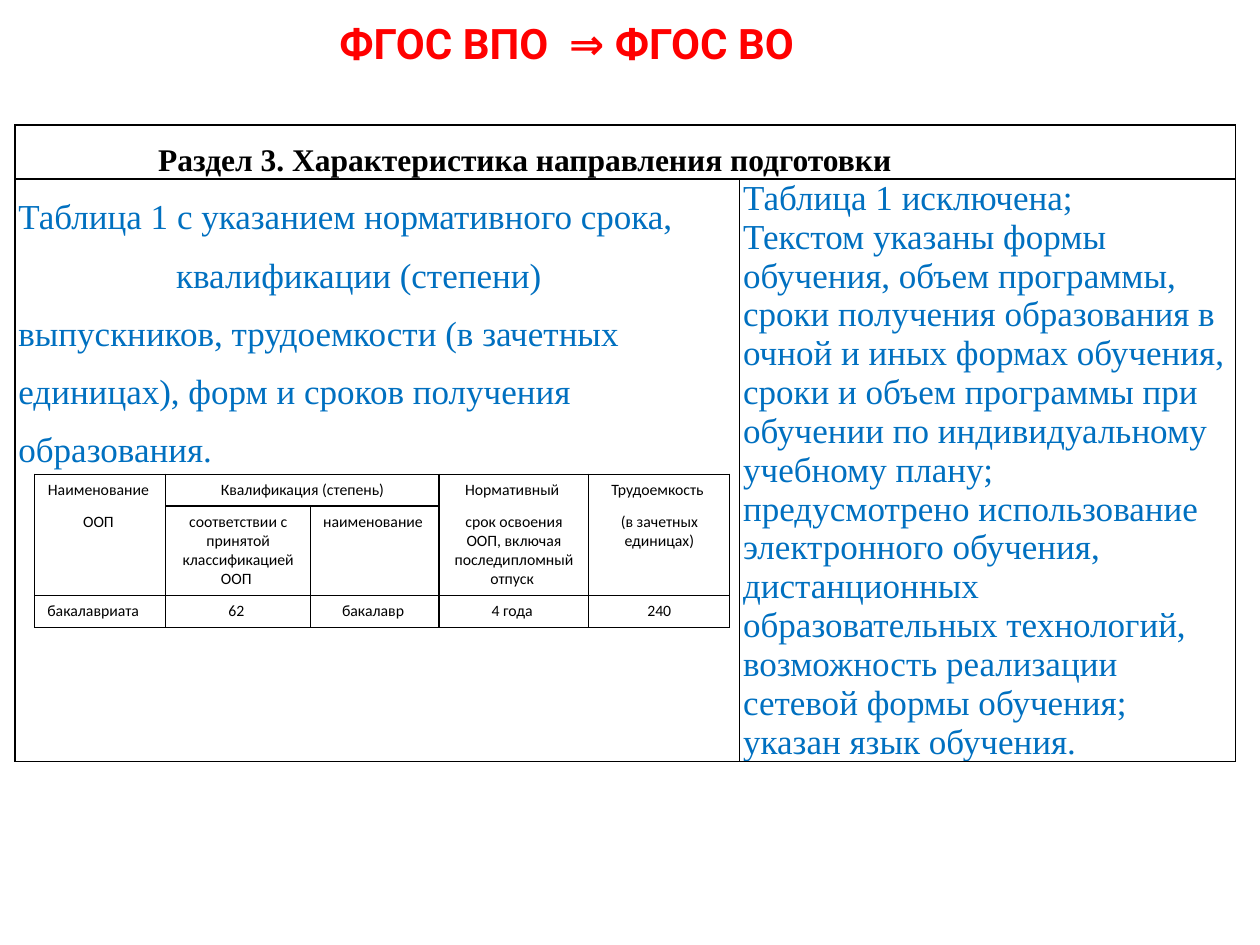
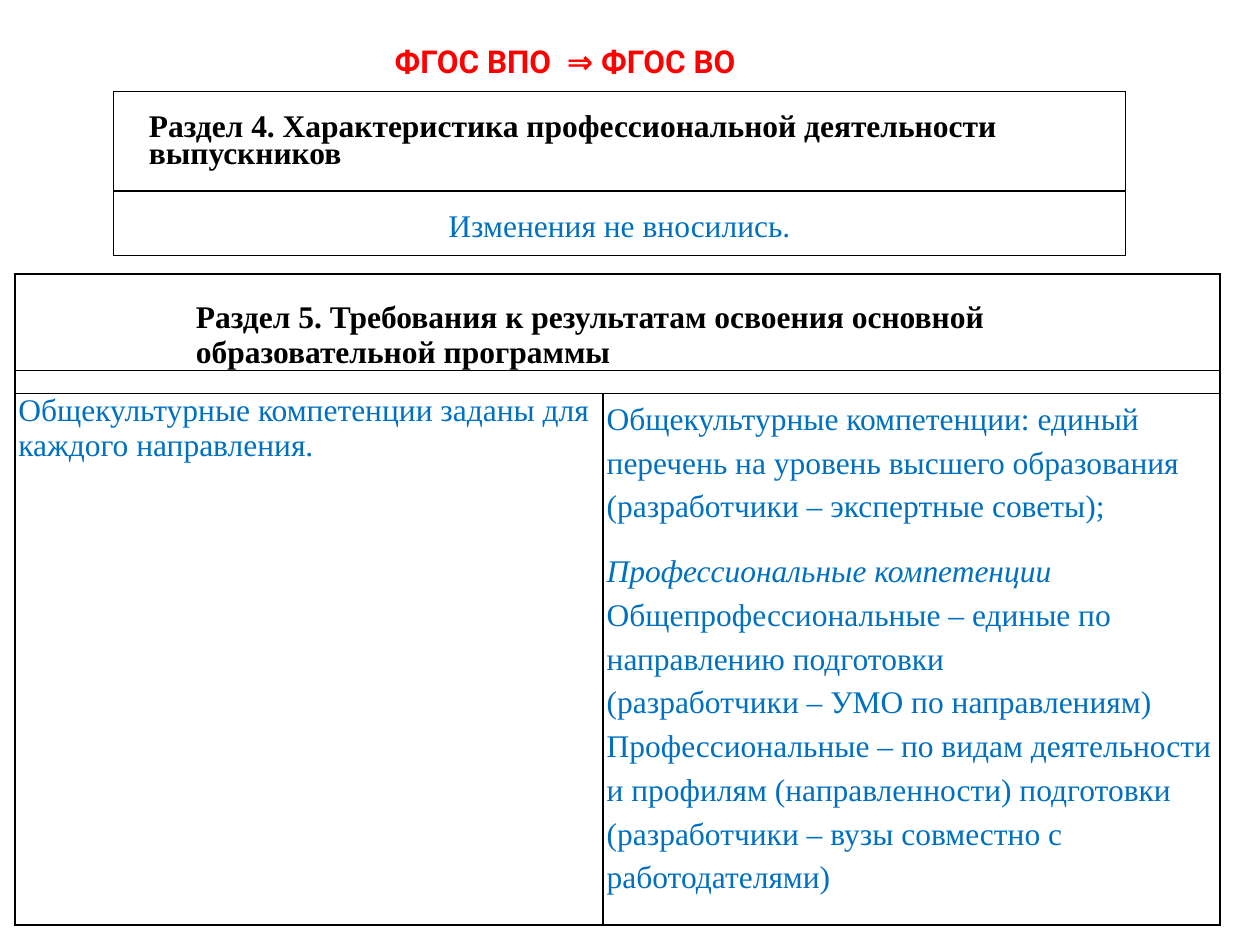
from dataclasses import dataclass

from lxml.etree import SubElement
from pptx import Presentation
from pptx.dml.color import RGBColor
from pptx.enum.text import MSO_ANCHOR, MSO_AUTO_SIZE, PP_ALIGN
from pptx.oxml.ns import qn
from pptx.util import Cm, Pt


@dataclass(frozen=True)
class Theme:
    red: RGBColor = RGBColor(0xFF, 0x00, 0x00)
    blue: RGBColor = RGBColor(0x00, 0x70, 0xC0)
    black: RGBColor = RGBColor(0x00, 0x00, 0x00)
    title_font: str = "Roboto"
    text_font: str = "Times New Roman"
    small_font: str = "Calibri"
    title_size: int = 24
    body_size: int = 20
    section_size: int = 18
    small_size: int = 9
    side_margin: float = 0.07
    top_gap: float = 0.54
    section_spacing: float = 15.1


THEME = Theme()
TITLE = "ФГОС ВПО  ⇒ ФГОС ВО"
ALL_SIDES = "LRTB"


def add_run(paragraph, text, font, size, color, bold=False, italic=False):
    """Add text as runs, turning each newline into a line break."""
    for number, line in enumerate(text.split("\n")):
        if number:
            paragraph.add_line_break()
        if not line:
            continue
        run = paragraph.add_run()
        run.text = line
        run.font.name = font
        run.font.size = Pt(size)
        run.font.color.rgb = color
        run.font.bold = bold
        run.font.italic = italic


def set_title(slide, left, top, width, height, size, alignment):
    title = slide.shapes.title
    title.left, title.top = Cm(left), Cm(top)
    title.width, title.height = Cm(width), Cm(height)
    frame = title.text_frame
    frame.auto_size = MSO_AUTO_SIZE.NONE
    frame.vertical_anchor = MSO_ANCHOR.MIDDLE
    paragraph = frame.paragraphs[0]
    paragraph.alignment = alignment
    add_run(paragraph, TITLE, THEME.title_font, size, THEME.red, bold=True)


def set_borders(cell, width, sides):
    """Draw the named sides and hide the others; the cell stays unfilled."""
    properties = cell._tc.get_or_add_tcPr()
    for side in ALL_SIDES:
        line = SubElement(properties, qn(f"a:ln{side}"), w=str(Pt(width)))
        if side in sides:
            fill = SubElement(line, qn("a:solidFill"))
            SubElement(fill, qn("a:srgbClr"), val=str(THEME.black))
        else:
            SubElement(line, qn("a:noFill"))
    cell.fill.background()


def add_table(slide, left, top, columns, rows, border_width=1, open_cells=None):
    """Add a ruled table; open_cells maps (row, column) to the sides drawn there."""
    frame = slide.shapes.add_table(len(rows), len(columns), Cm(left), Cm(top),
                                   Cm(sum(columns)), Cm(sum(rows)))
    table = frame.table
    table.first_row = table.horz_banding = False
    for column, width in zip(table.columns, columns):
        column.width = Cm(width)
    for row, height in zip(table.rows, rows):
        row.height = Cm(height)
    for row in range(len(rows)):
        for column in range(len(columns)):
            sides = (open_cells or {}).get((row, column), ALL_SIDES)
            set_borders(table.cell(row, column), border_width, sides)
    return table


def merge_in_row(table, row, first, last):
    table.cell(row, first).merge(table.cell(row, last))


def set_margins(cell, top=0):
    cell.margin_left = cell.margin_right = Cm(THEME.side_margin)
    cell.margin_top, cell.margin_bottom = Cm(top), 0


def next_paragraph(cell):
    """Return the empty first paragraph, or a new one after the text."""
    frame = cell.text_frame
    first = frame.paragraphs[0]
    return frame.add_paragraph() if first.runs else first


def add_section_heading(cell, text, indent, line_spacing=None):
    set_margins(cell, THEME.top_gap)
    paragraph = next_paragraph(cell)
    paragraph._p.get_or_add_pPr().set("marL", str(Cm(indent)))
    if line_spacing:
        paragraph.line_spacing = Pt(line_spacing)
    add_run(paragraph, text, THEME.text_font, THEME.section_size, THEME.black, bold=True)


def add_body(cell, *runs, size=THEME.section_size, line_spacing=None, space_before=0,
             first_indent=0, alignment=None):
    """Add a blue paragraph; each run is a pair of text and italic flag."""
    paragraph = next_paragraph(cell)
    paragraph.alignment = alignment
    paragraph.line_spacing = line_spacing
    paragraph.space_before = Pt(space_before)
    if first_indent:
        paragraph._p.get_or_add_pPr().set("indent", str(Cm(first_indent)))
    for text, italic in runs:
        add_run(paragraph, text, THEME.text_font, size, THEME.blue, italic=italic)


def add_small_text(cell, text, alignment):
    paragraph = next_paragraph(cell)
    paragraph.alignment = alignment
    add_run(paragraph, text, THEME.small_font, THEME.small_size, THEME.black)


def add_qualification_table(slide):
    open_cells = {(0, column): "B" for column in range(6)}
    for column in (0, 4, 5):
        open_cells[1, column] = "LRT"
        open_cells[2, column] = "LRB"
    table = add_table(slide, 0.7, 8.53, [2.64, 2.59, 0.33, 2.59, 3.02, 2.84],
                      [1.02, 0.64, 1.8, 0.64], 0.75, open_cells)
    for row, first, last in ((0, 2, 3), (1, 1, 3), (2, 1, 2), (3, 1, 2)):
        merge_in_row(table, row, first, last)
    contents = [
        {0: "Наименование ", 1: "Квалификация (степень)", 4: "Нормативный ",
         5: "Трудоемкость "},
        {0: "ООП ", 1: "соответствии с принятой классификацией ООП ", 3: "наименование ",
         4: "срок освоения ООП, включая последипломный отпуск ", 5: "(в зачетных единицах)"},
        {0: "бакалавриата", 1: "62 ", 3: "бакалавр ", 4: "4 года ", 5: "240"},
    ]
    for row, texts in enumerate(contents, start=1):
        for column, text in texts.items():
            is_name = (row, column) == (3, 0)
            add_small_text(table.cell(row, column), text,
                           PP_ALIGN.LEFT if is_name else PP_ALIGN.CENTER)


def build_section_3(slide):
    set_title(slide, 0.59, 0, 21.67, 1.73, THEME.title_size, PP_ALIGN.CENTER)
    table = add_table(slide, 0.3, 2.52, [14.61, 10], [1.09, 11.73])
    merge_in_row(table, 0, 0, 1)
    add_section_heading(table.cell(0, 0), "Раздел 3. Характеристика направления подготовки",
                        2.82, THEME.section_spacing)
    before, after = table.cell(1, 0), table.cell(1, 1)
    set_margins(before)
    set_margins(after)
    size = THEME.body_size
    add_body(before, ("Таблица 1 с указанием нормативного срока,", False),
             size=size, line_spacing=1.5)
    add_body(before, ("квалификации (степени) выпускников, трудоемкости (в зачетных единицах), "
                      "форм и сроков получения образования.", False),
             size=size, line_spacing=1.5, first_indent=3.18)
    add_body(after, ("Таблица 1 исключена; \nТекстом указаны формы обучения, объем программы, "
                     "сроки получения образования в очной и иных формах обучения, сроки и объем "
                     "программы при обучении по индивидуальному учебному плану;", False), size=size)
    add_body(after, ("предусмотрено использование электронного обучения, дистанционных "
                     "образовательных технологий, возможность реализации сетевой формы обучения; "
                     "указан язык обучения.", False), size=size)
    add_qualification_table(slide)


def add_section_4_table(slide):
    table = add_table(slide, 2.29, 1.84, [20.4], [2.01, 1.3])
    add_section_heading(table.cell(0, 0), "Раздел 4. Характеристика профессиональной "
                        "деятельности выпускников", 0.64, THEME.section_spacing)
    set_margins(table.cell(1, 0), THEME.top_gap)
    add_body(table.cell(1, 0), ("Изменения не вносились.", False),
             line_spacing=Pt(15.3), alignment=PP_ALIGN.CENTER)


def add_section_5_table(slide):
    table = add_table(slide, 0.3, 5.52, [11.86, 12.43], [1.95, 0.46, 10.72])
    for row in (0, 1):
        merge_in_row(table, row, 0, 1)
    add_section_heading(table.cell(0, 0), "Раздел 5. Требования к результатам освоения "
                        "основной образовательной программы", 3.58)
    for column in (0, 1):
        divider = table.cell(1, column)
        set_margins(divider)
        SubElement(divider.text_frame.paragraphs[0]._p, qn("a:endParaRPr"), sz="600")
    before, after = table.cell(2, 0), table.cell(2, 1)
    set_margins(before)
    set_margins(after)
    add_body(before, ("Общекультурные компетенции заданы для каждого направления.", False))
    add_body(after, ("Общекультурные компетенции: единый перечень на уровень высшего образования "
                     "(разработчики – экспертные советы);", False),
             line_spacing=Pt(25), space_before=12)
    add_body(after, ("Профессиональные компетенции \n", True),
             ("Общепрофессиональные – единые по направлению подготовки \n"
              "(разработчики – УМО по направлениям)\n"
              "Профессиональные – по видам деятельности и профилям (направленности) подготовки "
              "(разработчики – вузы совместно с работодателями)", False),
             line_spacing=Pt(25), space_before=12)


def build_sections_4_and_5(slide):
    set_title(slide, 7.7, 0.72, 8.31, 1.02, THEME.section_size, PP_ALIGN.LEFT)
    add_section_5_table(slide)
    add_section_4_table(slide)


def main():
    presentation = Presentation()
    presentation.slide_width, presentation.slide_height = Cm(25.4), Cm(19.05)
    title_only = presentation.slide_layouts[5]
    for build in (build_section_3, build_sections_4_and_5):
        build(presentation.slides.add_slide(title_only))
    presentation.save("out.pptx")


if __name__ == "__main__":
    main()
